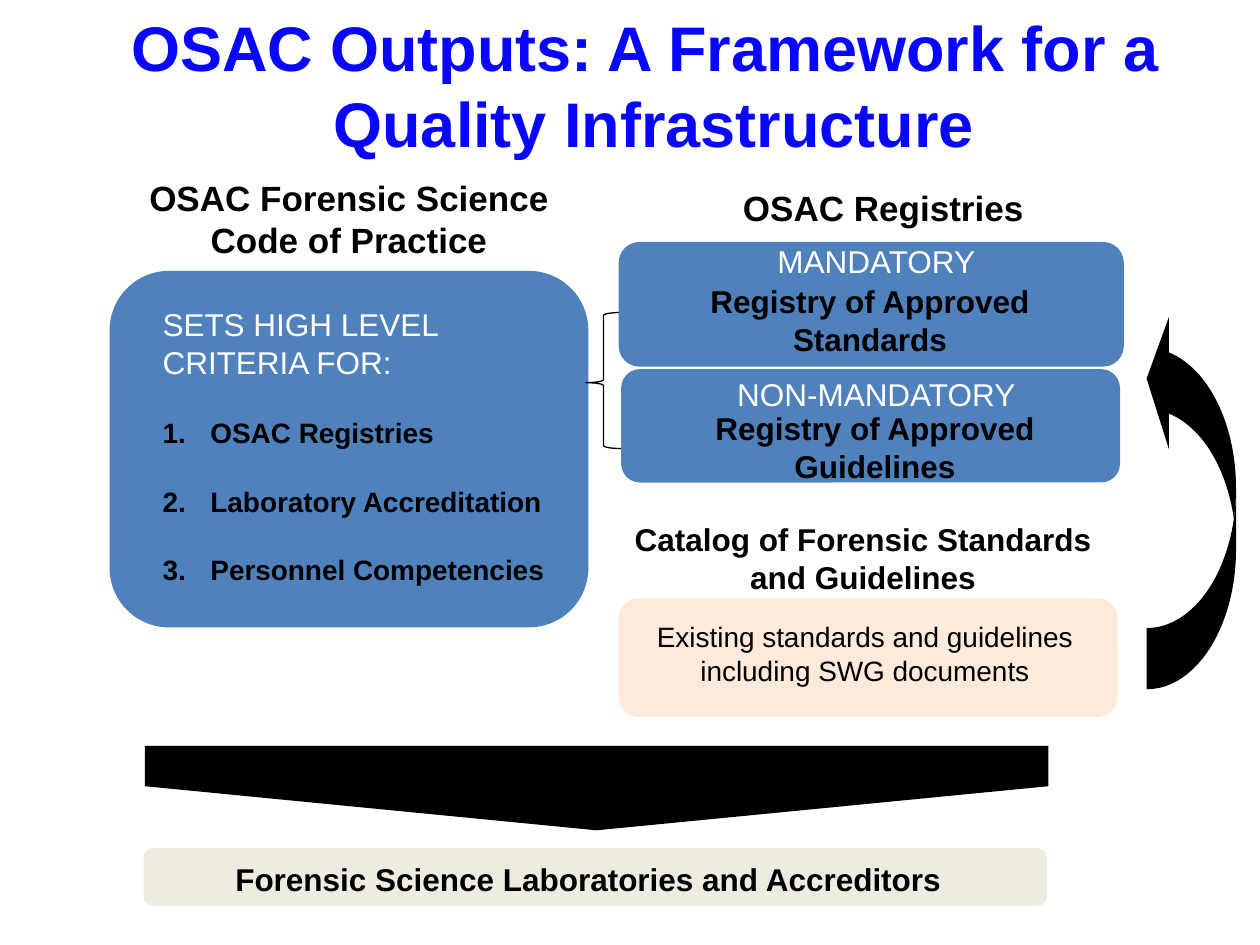
from dataclasses import dataclass

import pptx
import pptx.dml.color
import pptx.enum.shapes
import pptx.enum.text
import pptx.oxml
import pptx.util

Inches = pptx.util.Inches
Pt = pptx.util.Pt
RGBColor = pptx.dml.color.RGBColor
Preset = pptx.enum.shapes.MSO_SHAPE
Align = pptx.enum.text.PP_ALIGN
Anchor = pptx.enum.text.MSO_ANCHOR
AutoSize = pptx.enum.text.MSO_AUTO_SIZE

BLACK = RGBColor(0x00, 0x00, 0x00)
WHITE = RGBColor(0xFF, 0xFF, 0xFF)
TITLE_BLUE = RGBColor(0x09, 0x06, 0xFF)
PANEL_BLUE = RGBColor(0x4F, 0x81, 0xBD)
PEACH = RGBColor(0xFD, 0xEA, 0xDA)
SAND = RGBColor(0xEE, 0xEC, 0xE1)
FONT = "Arial"

Box = tuple[float, float, float, float]


@dataclass(frozen=True)
class Block:
    box: Box
    preset: Preset
    fill: RGBColor | None
    adjustments: tuple[float, ...] = ()
    rotation: float = 0


@dataclass(frozen=True)
class Label:
    box: Box
    lines: tuple[str, ...]
    size: float = 18
    bold: bool = True
    color: RGBColor = BLACK


BLOCKS = (
    Block((7.96, 3.62, 2.99, 0.71), Preset.CURVED_UP_ARROW, BLACK, (0.684, 1.478, 0.25), 270),
    Block((4.4, 2.67, 0.67, 7.17), Preset.PENTAGON, BLACK, (0.522,), 90),
    Block((1.14, 6.73, 7.17, 0.46), Preset.ROUNDED_RECTANGLE, SAND),
    Block((0.87, 2.15, 3.8, 2.83), Preset.ROUNDED_RECTANGLE, PANEL_BLUE),
    Block((4.65, 2.48, 0.28, 1.08), Preset.LEFT_BRACE, None, (0.083, 0.516)),
    Block((4.93, 2.93, 3.96, 0.9), Preset.ROUNDED_RECTANGLE, PANEL_BLUE),
    Block((4.91, 1.92, 4.01, 0.99), Preset.ROUNDED_RECTANGLE, PANEL_BLUE),
    Block((4.91, 4.75, 3.96, 0.94), Preset.ROUNDED_RECTANGLE, PEACH),
)

LABELS = (
    Label((1.34, 6.78, 6.66, 0.36), ("Forensic Science Laboratories and Accreditors",)),
    Label((1.08, 1.35, 3.38, 0.77), ("OSAC Forensic Science ", "Code of Practice"), 20),
    Label((5.04, 2.19, 3.73, 0.71), ("Registry of Approved Standards",)),
    Label((5.08, 3.2, 3.73, 0.71), ("Registry of Approved Guidelines",)),
    Label((6.03, 1.87, 1.85, 0.4), ("MANDATORY",), bold=False, color=WHITE),
    Label((5.59, 2.93, 2.73, 0.4), ("NON-MANDATORY",), bold=False, color=WHITE),
    Label((5.69, 1.43, 2.64, 0.44), ("OSAC Registries",), 20),
    Label((5, 4.87, 3.73, 0.64),
          ("Existing standards and guidelines including SWG documents",), 16, False),
    Label((4.83, 4.08, 4.04, 0.71), ("Catalog of Forensic Standards and Guidelines",)),
)

CRITERIA = ("OSAC Registries", "Laboratory Accreditation", "Personnel Competencies")


def add_run(paragraph, text: str, size: float, bold: bool, color: RGBColor) -> None:
    run = paragraph.add_run()
    run.text = text
    run.font.name = FONT
    run.font.size = Pt(size)
    run.font.bold = bold
    run.font.color.rgb = color


def place(shape, box: Box) -> None:
    shape.left, shape.top, shape.width, shape.height = map(Inches, box)


def add_block(slide, block: Block) -> None:
    shape = slide.shapes.add_shape(block.preset, *map(Inches, block.box))
    shape.shadow.inherit = False
    shape.rotation = block.rotation
    for index, value in enumerate(block.adjustments):
        shape.adjustments[index] = value
    if block.fill is None:
        shape.fill.background()
        shape.line.color.rgb = BLACK
        shape.line.width = Pt(0.75)
    else:
        shape.fill.solid()
        shape.fill.fore_color.rgb = block.fill
        shape.line.fill.background()


def add_label(slide, label: Label) -> None:
    frame = slide.shapes.add_textbox(*map(Inches, label.box)).text_frame
    frame.word_wrap = True
    for index, line in enumerate(label.lines):
        paragraph = frame.add_paragraph() if index else frame.paragraphs[0]
        paragraph.alignment = Align.CENTER
        add_run(paragraph, line, label.size, label.bold, label.color)


def set_bullet(paragraph, indent: float, numbered: bool) -> None:
    properties = paragraph._p.get_or_add_pPr()
    properties.set("marL", str(Inches(indent)))
    properties.set("indent", str(-Inches(indent)))
    tag = "a:buAutoNum" if numbered else "a:buNone"
    bullet = pptx.oxml.parse_xml(
        f'<{tag} xmlns:a="http://schemas.openxmlformats.org/drawingml/2006/main"/>')
    if numbered:
        bullet.set("type", "arabicPeriod")
    properties.append(bullet)


def fill_title(title) -> None:
    place(title, (0.55, 0.08, 9.28, 1.18))
    frame = title.text_frame
    frame.auto_size = AutoSize.NONE
    frame.vertical_anchor = Anchor.MIDDLE
    paragraph = frame.paragraphs[0]
    paragraph.alignment = Align.CENTER
    add_run(paragraph, "OSAC Outputs: A Framework for a ", 36, True, TITLE_BLUE)
    paragraph.add_line_break()
    add_run(paragraph, "Quality Infrastructure", 36, True, TITLE_BLUE)


def fill_criteria(body) -> None:
    place(body, (1.19, 2.37, 3.34, 2.63))
    frame = body.text_frame
    frame.auto_size = AutoSize.NONE
    frame.vertical_anchor = Anchor.TOP
    heading = frame.paragraphs[0]
    heading.space_before = Pt(0)
    set_bullet(heading, 0, False)
    add_run(heading, "SETS HIGH LEVEL CRITERIA FOR:", 18, False, WHITE)
    for criterion in CRITERIA:
        paragraph = frame.add_paragraph()
        paragraph.space_before = Pt(20)
        set_bullet(paragraph, 0.38, True)
        add_run(paragraph, criterion, 16, True, BLACK)


def main() -> None:
    presentation = pptx.Presentation()
    presentation.slide_width = Inches(10)
    presentation.slide_height = Inches(7.5)
    slide = presentation.slides.add_slide(presentation.slide_layouts[1])
    fill_title(slide.shapes.title)
    for block in BLOCKS:
        add_block(slide, block)
    body = slide.placeholders[1]
    fill_criteria(body)
    slide.shapes._spTree.append(body._element)  # bring the list in front of its panel
    for label in LABELS:
        add_label(slide, label)
    presentation.save("out.pptx")


if __name__ == "__main__":
    main()
